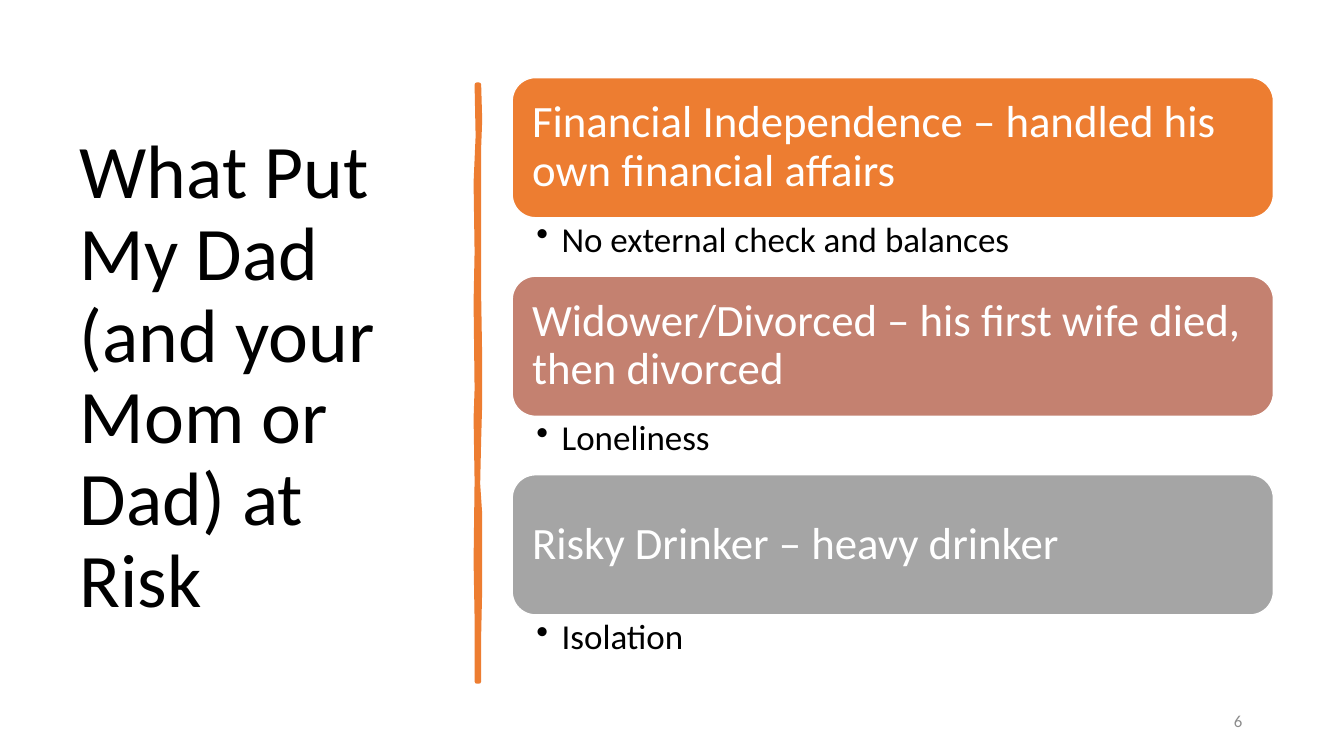
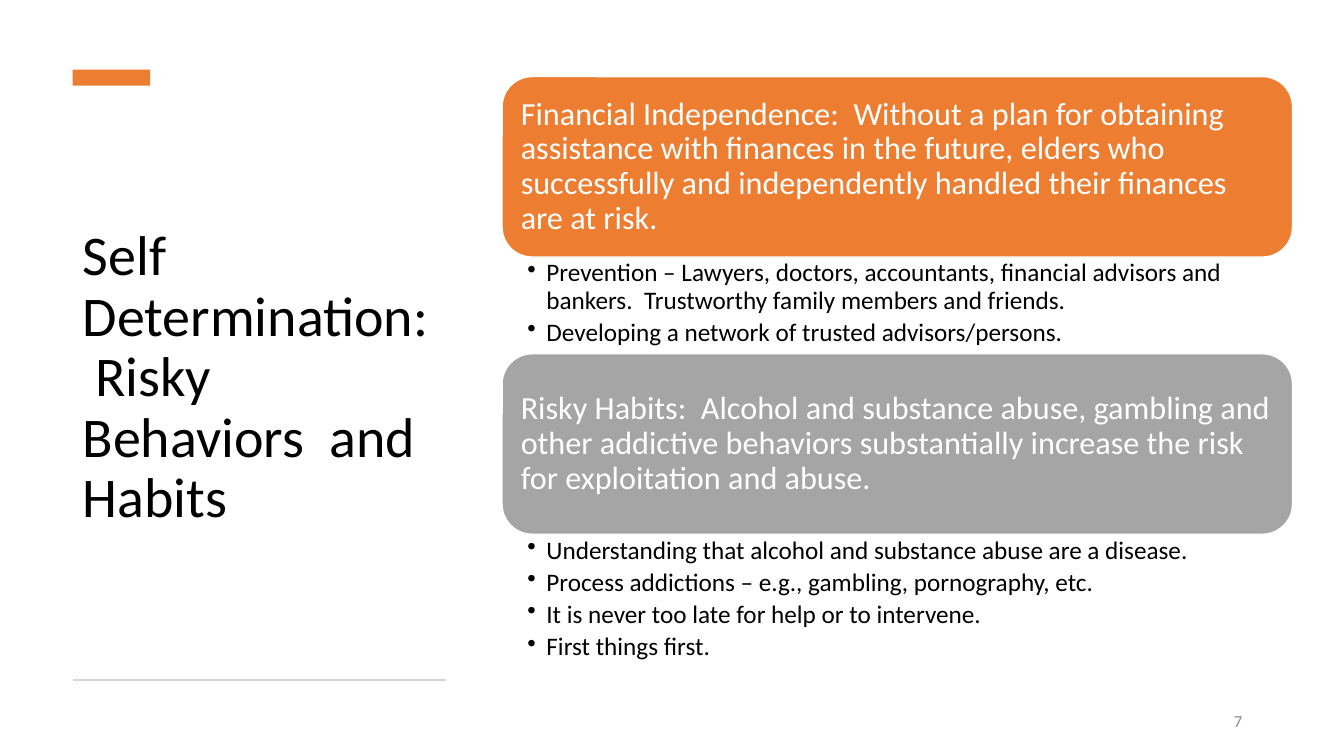
import pptx
import pptx.dml.color
import pptx.enum.shapes
import pptx.enum.text
import pptx.oxml.ns
import pptx.util
from lxml import etree

PX = 9144  # EMU in one px, 100 px to the inch
FONT = "Calibri"
RGB = pptx.dml.color.RGBColor
BLACK = RGB(0x00, 0x00, 0x00)
WHITE = RGB(0xFF, 0xFF, 0xFF)
ORANGE = RGB(0xED, 0x7D, 0x31)
ROSE = RGB(0xC4, 0x81, 0x70)
GRAY = RGB(0xA5, 0xA5, 0xA5)
RULE_GRAY = RGB(0xD5, 0xD5, 0xD5)
NUMBER_GRAY = RGB(0x8C, 0x8C, 0x8C)

SHAPE = pptx.enum.shapes.MSO_SHAPE
ALIGN = pptx.enum.text.PP_ALIGN
ANCHOR = pptx.enum.text.MSO_ANCHOR
Pt = pptx.util.Pt

# Brush stroke edges: (y, x) from top to bottom
STROKE_LEFT = [(84, 473), (135, 474), (181, 472), (250, 473), (300, 472),
               (386, 473), (415, 472), (477, 473), (557, 472), (613, 473), (676, 473)]
STROKE_RIGHT = [(84, 475), (119, 476), (146, 475), (226, 475), (294, 475), (356, 476),
                (400, 476), (436, 475), (480, 474), (510, 476), (584, 476), (630, 475),
                (676, 475)]


def px(*lengths):
    return [length * PX for length in lengths]


def apply(target, formats):
    for name, value in formats.items():
        setattr(target, name, value)


def write(tf, lines, size, color, frame=None, paragraph=None):
    """Fill a text frame with one formatted paragraph per line."""
    apply(tf, {"word_wrap": True, "auto_size": pptx.enum.text.MSO_AUTO_SIZE.NONE,
               **(frame or {})})
    for i, line in enumerate(lines):
        p = tf.paragraphs[0] if i == 0 else tf.add_paragraph()
        apply(p, {"alignment": ALIGN.LEFT, **(paragraph or {})})
        r = p.add_run()
        r.text = line
        apply(r.font, {"name": FONT, "size": Pt(size)})
        r.font.color.rgb = color


def margins(left, top, right, bottom):
    names = ("margin_left", "margin_top", "margin_right", "margin_bottom")
    return dict(zip(names, px(left, top, right, bottom)))


def paint(sp, fill):
    sp.shadow.inherit = False
    sp.fill.solid()
    sp.fill.fore_color.rgb = fill


def add_slide(prs, title, box, size, number):
    """Add a slide with its side title and page number."""
    s = prs.slides.add_slide(prs.slide_layouts[5])
    apply(s.shapes.title, dict(zip(("left", "top", "width", "height"), px(*box))))
    write(s.shapes.title.text_frame, [title], size, BLACK,
          {"vertical_anchor": ANCHOR.MIDDLE}, {"line_spacing": 0.9})
    sp = s.shapes.add_textbox(*px(942, 695, 300, 40))
    write(sp.text_frame, [str(number)], 12, NUMBER_GRAY,
          {"vertical_anchor": ANCHOR.MIDDLE}, {"alignment": ALIGN.RIGHT})
    return s


def add_card(s, box, text, size, inset, fill):
    sp = s.shapes.add_shape(SHAPE.ROUNDED_RECTANGLE, *px(*box))
    paint(sp, fill)
    sp.line.color.rgb = WHITE
    sp.line.width = Pt(1)
    write(sp.text_frame, [text], size, WHITE,
          {"vertical_anchor": ANCHOR.MIDDLE, **margins(*[inset] * 4)},
          {"line_spacing": 0.9})


def add_bullets(s, box, lines, size, insets, indent):
    sp = s.shapes.add_textbox(*px(*box))
    write(sp.text_frame, lines, size, BLACK, margins(*insets),
          {"line_spacing": 0.9, "space_after": Pt(size * 0.2)})
    for p in sp.text_frame.paragraphs:
        pPr = p._p.get_or_add_pPr()
        pPr.set("marL", str(indent * PX))
        pPr.set("indent", str(-indent * PX))
        etree.SubElement(pPr, pptx.oxml.ns.qn("a:buChar"), char="•")


def add_stack(s, left, top, width, card_height, card_size, inset, bullets, groups):
    """Stack cards downwards, each followed by its bullets."""
    for fill, heading, lines, height in groups:
        add_card(s, (left, top, width, card_height), heading, card_size, inset, fill)
        top += card_height
        add_bullets(s, (left, top, width, height), lines, **bullets)
        top += height


def add_brush_stroke(s):
    outline = [(x, y) for y, x in STROKE_LEFT + STROKE_RIGHT[::-1]]
    builder = s.shapes.build_freeform(*outline[0], scale=PX)
    builder.add_line_segments(outline[1:], close=True)
    sp = builder.convert_to_shape()
    paint(sp, ORANGE)
    sp.line.color.rgb = ORANGE
    sp.line.width = Pt(3.25)
    etree.SubElement(sp.line._get_or_add_ln(), pptx.oxml.ns.qn("a:round"))


def add_accent_bar(s):
    sp = s.shapes.add_shape(SHAPE.RECTANGLE, *px(72, 69, 77, 16))
    paint(sp, ORANGE)
    sp.line.fill.background()


def add_rule(s):
    line = s.shapes.add_connector(pptx.enum.shapes.MSO_CONNECTOR.STRAIGHT,
                                  *px(72, 675, 442, 675))
    line.line.color.rgb = RULE_GRAY
    line.line.width = Pt(1.5)
    etree.SubElement(line._element.spPr, pptx.oxml.ns.qn("a:effectLst"))


def add_risk_factors(prs):
    s = add_slide(prs, "What Put My Dad (and your Mom or Dad) at Risk",
                  (69, 70, 374, 611), 54, 6)
    add_brush_stroke(s)
    add_stack(s, 508, 77, 755, 139, 32, 13,
              {"size": 25, "insets": (24, 4, 25, 4), "indent": 25}, [
                  (ORANGE, "Financial Independence – handled his own financial affairs",
                   ["No external check and balances"], 58),
                  (ROSE, "Widower/Divorced – his first wife died, then divorced",
                   ["Loneliness"], 58),
                  (GRAY, "Risky Drinker – heavy drinker", ["Isolation"], 58),
              ])


def add_risky_habits(prs):
    s = add_slide(prs, "Self Determination:  Risky Behaviors  and Habits",
                  (72, 105, 370, 541), 40, 7)
    add_accent_bar(s)
    add_rule(s)
    add_stack(s, 498, 76, 784, 179, 23, 10,
              {"size": 18, "insets": (25, 3, 18, 3), "indent": 19}, [
                  (ORANGE, "Financial Independence:  Without a plan for obtaining "
                           "assistance with finances in the future, elders who "
                           "successfully and independently handled their finances "
                           "are at risk.",
                   ["Prevention – Lawyers, doctors, accountants, financial advisors "
                    "and bankers.  Trustworthy family members and friends.",
                    "Developing a network of trusted advisors/persons."], 96),
                  (GRAY, "Risky Habits:  Alcohol and substance abuse, gambling and "
                         "other addictive behaviors substantially increase the risk "
                         "for exploitation and abuse.",
                   ["Understanding that alcohol and substance abuse are a disease.",
                    "Process addictions – e.g., gambling, pornography, etc.",
                    "It is never too late for help or to intervene.",
                    "First things first."], 135),
              ])


def main():
    prs = pptx.Presentation()
    prs.slide_width, prs.slide_height = px(1333, 750)
    add_risk_factors(prs)
    add_risky_habits(prs)
    prs.save("out.pptx")


if __name__ == "__main__":
    main()
